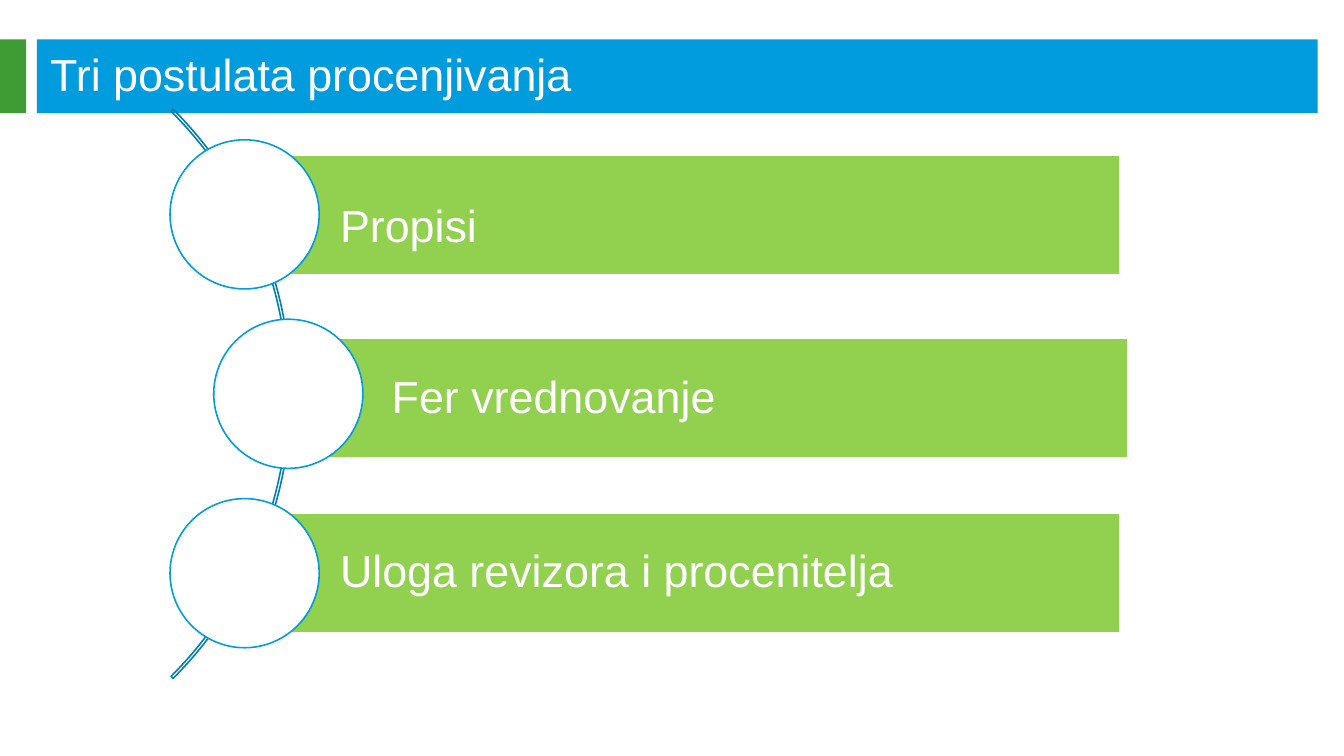
from pptx import Presentation
from pptx.util import Inches, Pt
from pptx.dml.color import RGBColor
from pptx.enum import shapes, text

CELL = 0.1  # inches; the slide is a grid of 100 columns by 56.25 rows
COLS, ROWS = 100, 56.25
COLORS = {
    "blue": "009CDE",
    "arc": "007DB2",
    "green": "3F9C35",
    "lime": "92D050",
    "white": "FFFFFF",
}
KIND = shapes.MSO_SHAPE


def cells(n):
    return Inches(n * CELL)


def color(name):
    return RGBColor.from_string(COLORS[name])


def add_shape(s, kind, box, fill=None, line=None):
    sp = s.shapes.add_shape(kind, *map(cells, box))
    sp.shadow.inherit = False
    if fill:
        sp.fill.solid()
        sp.fill.fore_color.rgb = color(fill)
    else:
        sp.fill.background()
    if line:
        sp.line.color.rgb = color(line)
        sp.line.width = Pt(0.85)
    else:
        sp.line.fill.background()
    return sp


def add_label(sp, words, left, top=0.7, bottom=0.7, spacing=1.0):
    """Write left-aligned white words, with insets given in cells."""
    tf = sp.text_frame
    tf.word_wrap = True
    tf.vertical_anchor = text.MSO_ANCHOR.MIDDLE
    tf.margin_left, tf.margin_right = cells(left), cells(0.7)
    tf.margin_top, tf.margin_bottom = cells(top), cells(bottom)
    p = tf.paragraphs[0]
    p.alignment = text.PP_ALIGN.LEFT
    p.line_spacing = spacing
    r = p.add_run()
    r.text = words
    r.font.name = "Arial"
    r.font.size = Pt(24)
    r.font.color.rgb = color("white")


def header(s, box, title):
    x, y, w, h = box
    add_shape(s, KIND.RECTANGLE, (x, y, 1.95, h), "green")
    bar = add_shape(s, KIND.RECTANGLE, (x + 2.75, y, w - 2.75, h), "blue")
    add_label(bar, title, left=1, top=0.5, bottom=0.95)


def postulate(s, box, words, bar_shift, bar_drop, inset_top):
    """Circle at the left of the box, over a bar that runs to its right side."""
    x, y, w, size = box
    start = size / 2 + bar_shift
    bar_box = (x + start, y + bar_drop, w - start, 8.9)
    bar = add_shape(s, KIND.RECTANGLE, bar_box, "lime", "white")
    add_label(bar, words, left=7.1, top=inset_top, spacing=0.9)
    add_shape(s, KIND.OVAL, (x, y, size, size), "white", "blue")


def curved_list(s, box, items):
    x, y, w, h = box
    size, pitch, diameter = 11.1, 13.35, 59.9
    arc_box = (x + 9 - diameter, y + (h - diameter) / 2, diameter, diameter)
    arc = add_shape(s, KIND.BLOCK_ARC, arc_box, line="arc")
    for i, value in enumerate((189, 27, 0.0036)):  # 315° to 45°, thin band
        arc.adjustments[i] = value

    first = y + (h - 2 * pitch - size) / 2
    for i, (words, indent, right_gap, *bar) in enumerate(items):
        row = (x + indent, first + i * pitch, w - indent - right_gap, size)
        postulate(s, row, words, *bar)


def main():
    prs = Presentation()
    prs.slide_width, prs.slide_height = cells(COLS), cells(ROWS)
    s = prs.slides.add_slide(prs.slide_layouts[6])
    header(s, (0, 2.93, 98.05, 5.5), "Tri postulata procenjivanja")
    # words, indent, right gap, bar shift, bar drop, top inset
    items = [
        ("Propisi", 0, 0.6, 0, 1.15, 2.6),
        ("Fer vrednovanje", 3.25, 0, 0.6, 1.45, 0.7),
        ("Uloga revizora i procenitelja", 0, 0.6, 0, 1.1, 0.7),
    ]
    curved_list(s, (12.65, 8.15, 71.25, 42.3), items)
    prs.save("out.pptx")


if __name__ == "__main__":
    main()
